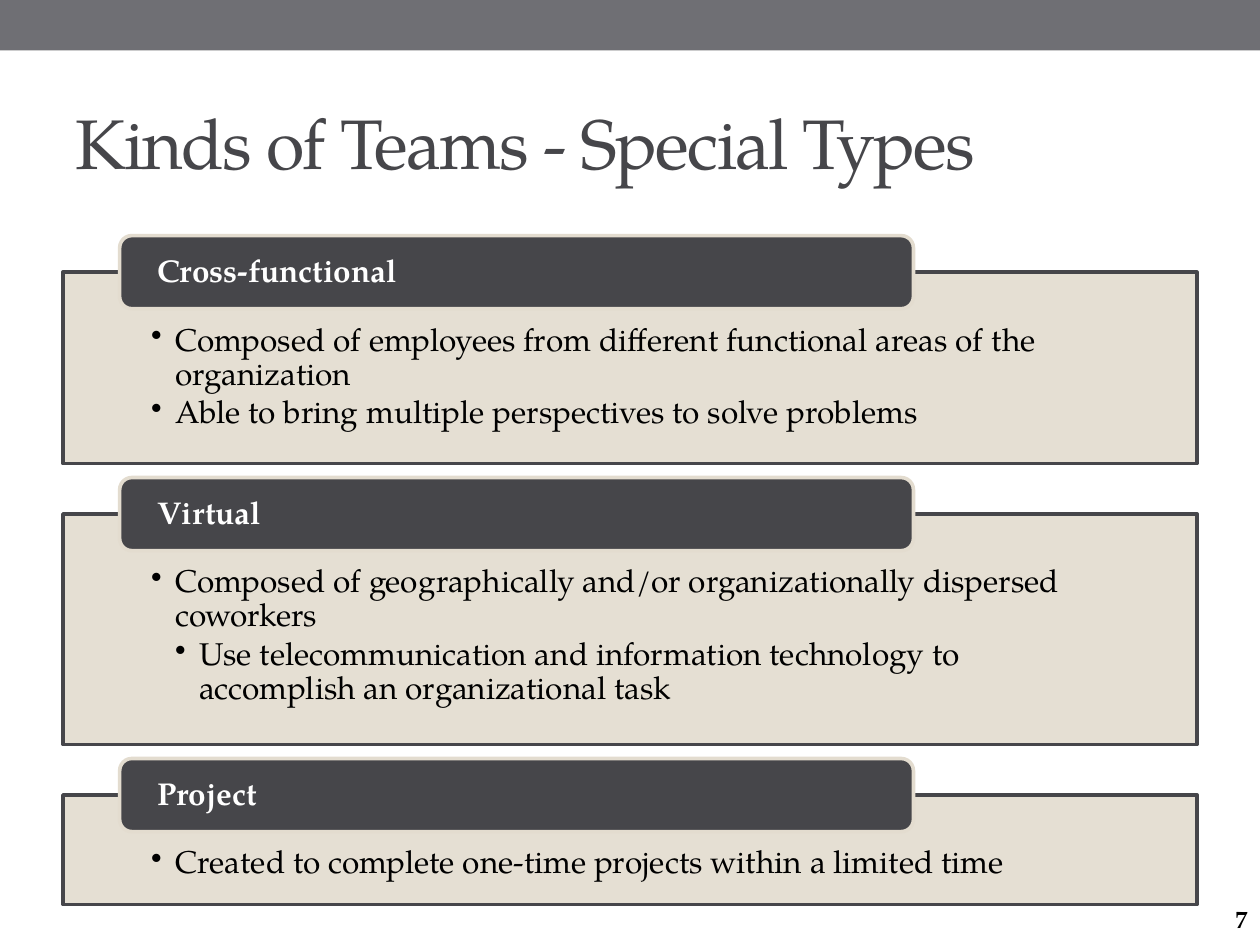
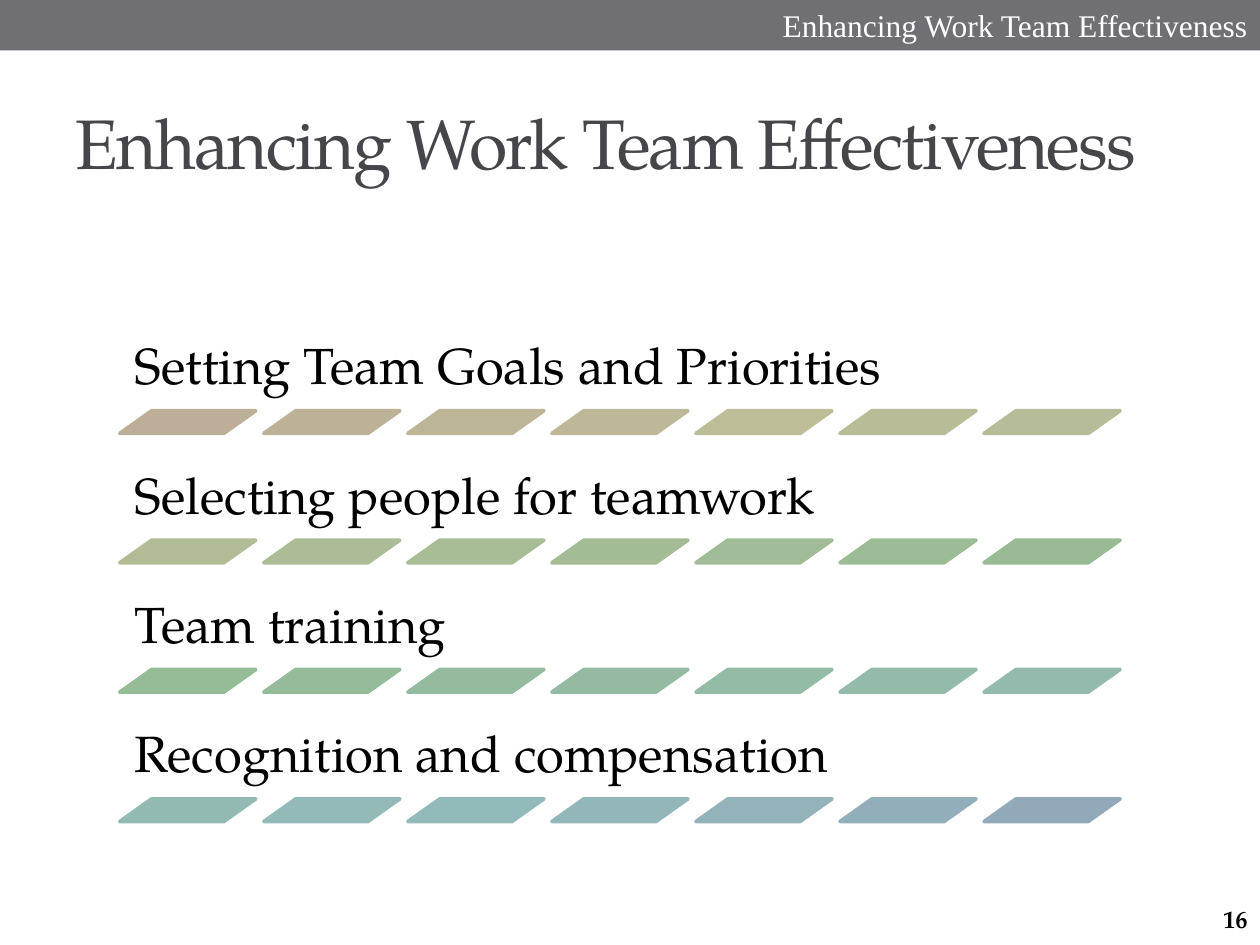
from colorsys import hls_to_rgb

from lxml import etree
from pptx import Presentation
from pptx.dml.color import RGBColor
from pptx.enum.shapes import MSO_SHAPE
from pptx.enum.text import MSO_ANCHOR, PP_ALIGN
from pptx.oxml.ns import qn
from pptx.util import Inches, Pt

RECTANGLE = MSO_SHAPE.RECTANGLE
ROUNDED = MSO_SHAPE.ROUNDED_RECTANGLE
PARALLELOGRAM = MSO_SHAPE.PARALLELOGRAM
LEFT, RIGHT = PP_ALIGN.LEFT, PP_ALIGN.RIGHT
TOP, MIDDLE, BOTTOM = MSO_ANCHOR.TOP, MSO_ANCHOR.MIDDLE, MSO_ANCHOR.BOTTOM
SERIF, HEADER_FONT = "TeX Gyre Pagella", "Times New Roman"
COLOURS = {
    "band": "6F6F74",
    "dark": "46464A",
    "sand": "E3DCCF",
    "black": "000000",
    "white": "FFFFFF",
}
LINE_WIDTH = Pt(2.08)


def add_box(page, kind, left, top, width, height, fill, line):
    box = page.shapes.add_shape(
        kind, Inches(left), Inches(top), Inches(width), Inches(height))
    box.shadow.inherit = False
    box.fill.solid()
    box.fill.fore_color.rgb = RGBColor.from_string(fill)
    box.line.color.rgb = RGBColor.from_string(line)
    box.line.width = LINE_WIDTH
    return box


def write(box, lines, size, colour, insets=(0.1, 0.05, 0.1, 0.05), anchor=MIDDLE,
          align=LEFT, font=SERIF, bold=False, line_spacing=1.0, space_after=0):
    frame = box.text_frame
    frame.word_wrap = True
    frame.vertical_anchor = anchor
    (frame.margin_left, frame.margin_top,
     frame.margin_right, frame.margin_bottom) = map(Inches, insets)
    frame.text = "\n".join(lines)
    for para in frame.paragraphs:
        para.alignment = align
        para.line_spacing = line_spacing
        para.space_before = Pt(0)
        para.space_after = Pt(space_after)
        for span in para.runs:
            span.font.name = font
            span.font.size = Pt(size)
            span.font.bold = bold
            span.font.color.rgb = RGBColor.from_string(colour)
    return frame


deck = Presentation()
deck.slide_width = Inches(10)
deck.slide_height = Inches(7.5)
layout = deck.slide_layouts[5]

pages = []
for heading, number in [("Kinds of Teams - Special Types", "7"),
                        ("Enhancing Work Team Effectiveness", "16")]:
    page = deck.slides.add_slide(layout)
    title = page.shapes.title
    title.left, title.top = Inches(0.5), Inches(0.58)
    title.width, title.height = Inches(9), Inches(1.08)
    frame = write(title, [heading], 40, COLOURS["dark"])
    frame.paragraphs[0].runs[0].font._element.set("spc", "-100")
    number_box = page.shapes.add_textbox(
        Inches(8.83), Inches(7.11), Inches(1.17), Inches(0.36))
    write(number_box, [number], 14, COLOURS["black"], align=RIGHT, bold=True)
    pages.append(page)
types_page, effectiveness_page = pages

band = add_box(types_page, RECTANGLE, 0, 0, 10, 0.4, COLOURS["band"], COLOURS["band"])
band.line.fill.background()
band.element.nvSpPr.cNvPr.set("id", "99")
layout.shapes.element.insert(2, band.element)

team_types = [
    ("Cross-functional", 1.52, [
        (1, "Composed of employees from different functional areas of the organization"),
        (1, "Able to bring multiple perspectives to solve problems")]),
    ("Virtual", 1.83, [
        (1, "Composed of geographically and/or organizationally dispersed coworkers"),
        (2, "Use telecommunication and information technology to accomplish an "
            "organizational task")]),
    ("Project", 0.87, [
        (1, "Created to complete one-time projects within a limited time")]),
]
PANEL_GAP = 0.4
BULLET_INDENT = 0.19
panel_top = 2.16
for name, panel_height, points in team_types:
    panel = add_box(types_page, RECTANGLE, 0.5, panel_top, 9, panel_height,
                    COLOURS["sand"], COLOURS["dark"])
    panel_colour = panel.element.spPr.find(qn("a:solidFill"))[0]
    etree.SubElement(panel_colour, qn("a:alpha"), val="90000")
    frame = write(panel, [text for level, text in points], 18, COLOURS["black"],
                  insets=(0.7, 0.41, 0.7, 0.14), anchor=TOP,
                  line_spacing=0.9, space_after=2.7)
    for para, (level, text) in zip(frame.paragraphs, points):
        para.level = level
        properties = para._p.get_or_add_pPr()
        properties.set("marL", str(Inches(BULLET_INDENT * level)))
        properties.set("indent", str(-Inches(BULLET_INDENT)))
        etree.SubElement(properties, qn("a:buChar"), char="•")

    tab = add_box(types_page, ROUNDED, 0.95, panel_top - 0.29, 6.3, 0.58,
                  COLOURS["dark"], COLOURS["sand"])
    write(tab, [name], 18, COLOURS["white"], insets=(0.27, 0, 0.27, 0),
          bold=True, line_spacing=0.9)
    panel_top += panel_height + PANEL_GAP

steps = [
    "Setting Team Goals and Priorities",
    "Selecting people for teamwork",
    "Team training",
    "Recognition and compensation",
]
DASHES = 7
ROW_STEP = 3.08 / 3
DASH_STEP = 6.86 / 6
last_dash = len(steps) * DASHES - 1
for row, step in enumerate(steps):
    dash_top = 3.26 + row * ROW_STEP
    label = effectiveness_page.shapes.add_textbox(
        Inches(0.95), Inches(dash_top - 0.74), Inches(8.1), Inches(0.74))
    write(label, [step], 29, COLOURS["black"], insets=(0.12,) * 4,
          anchor=BOTTOM, line_spacing=0.9)
    for column in range(DASHES):
        progress = (row * DASHES + column) / last_dash
        hue = (34.7 + 169.9 * progress) / 360
        channels = hls_to_rgb(hue, 0.67 - 0.02 * progress, 0.22)
        shade = "".join(f"{round(channel * 255):02X}" for channel in channels)
        dash = add_box(effectiveness_page, PARALLELOGRAM, 0.95 + column * DASH_STEP,
                       dash_top, 1.08, 0.18, shade, shade)
        dash.adjustments[0] = 1.41

header = effectiveness_page.shapes.add_textbox(
    Inches(6.07), Inches(0), Inches(3.93), Inches(0.4))
write(header, ["Enhancing Work Team Effectiveness"], 18, COLOURS["white"],
      anchor=TOP, align=RIGHT, font=HEADER_FONT)

deck.save("out.pptx")
